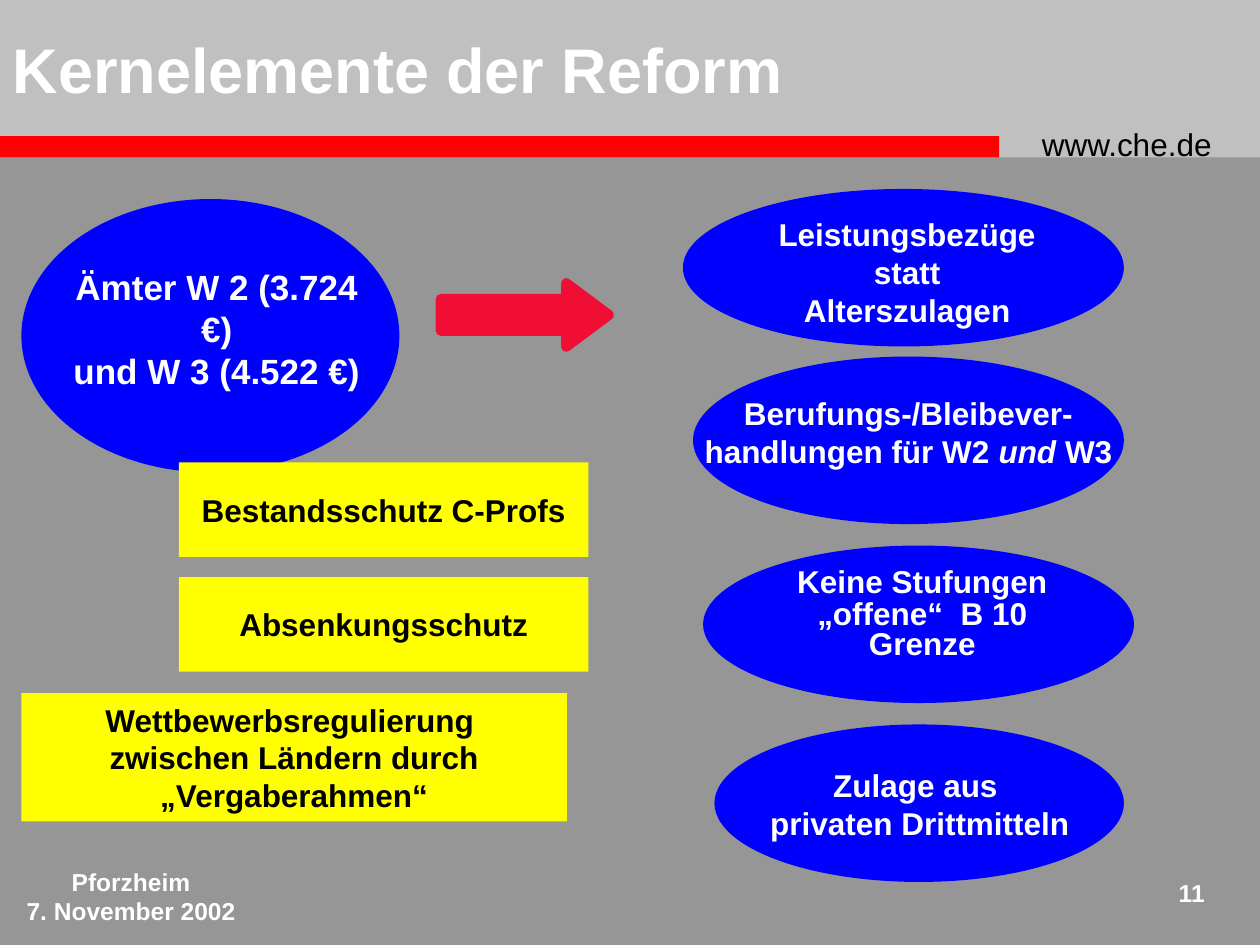
from dataclasses import dataclass

from pptx import Presentation
from pptx.dml.color import RGBColor as RGB
from pptx.enum.shapes import MSO_SHAPE as Shape
from pptx.enum.text import MSO_ANCHOR as Anchor, MSO_AUTO_SIZE as AutoSize, PP_ALIGN as Align
from pptx.util import Inches, Pt


@dataclass(frozen=True)
class Theme:
    font: str = "Arial"
    background: RGB = RGB(0x96, 0x96, 0x96)
    header: RGB = RGB(0xC0, 0xC0, 0xC0)
    stripe: RGB = RGB(0xFF, 0x00, 0x00)
    ellipse: RGB = RGB(0x00, 0x00, 0xFF)
    arrow: RGB = RGB(0xF0, 0x0E, 0x34)
    protection: RGB = RGB(0xFF, 0xFF, 0x00)
    white: RGB = RGB(0xFF, 0xFF, 0xFF)
    black: RGB = RGB(0x00, 0x00, 0x00)
    title: Pt = Pt(36)
    offices: Pt = Pt(20)
    body: Pt = Pt(18)
    footer: Pt = Pt(14)


theme = Theme()


def write(holder, text, size=theme.body, color=theme.white, bold=True, align=Align.CENTER,
          anchor=Anchor.MIDDLE, wrap=True, italic_word=None, line_spacing=None, space_before=None):
    """Fill a shape with one paragraph per line; \\v breaks a line within a paragraph."""
    frame = holder.text_frame
    frame.auto_size = AutoSize.NONE
    frame.word_wrap = wrap
    frame.vertical_anchor = anchor
    for number, line in enumerate(text.split("\n")):
        paragraph = frame.add_paragraph() if number else frame.paragraphs[0]
        paragraph.alignment = align
        paragraph.line_spacing = line_spacing
        paragraph.space_before = space_before if number else Pt(0)
        before, word, after = line.partition(italic_word) if italic_word else (line, "", "")
        if word:
            for part in (before, word, after):
                run = paragraph.add_run()
                run.text = part
                run.font.italic = part == word
        else:
            paragraph.text = line
        for run in paragraph.runs:
            run.font.name = theme.font
            run.font.size = size
            run.font.bold = bold
            run.font.color.rgb = color


def add_block(kind, box, fill):
    block = slide.shapes.add_shape(kind, *map(Inches, box))
    block.shadow.inherit = False
    block.fill.solid()
    block.fill.fore_color.rgb = fill
    block.line.fill.background()
    return block


prs = Presentation()
prs.slide_width, prs.slide_height = Inches(10), Inches(7.5)
slide = prs.slides.add_slide(prs.slide_layouts[5])
slide.background.fill.solid()
slide.background.fill.fore_color.rgb = theme.background

# Header band, stripe and web address
add_block(Shape.RECTANGLE, (0, 0, 10, 1.25), theme.header)
add_block(Shape.RECTANGLE, (0, 1.08, 7.93, 0.17), theme.stripe)
web_address = slide.shapes.add_textbox(Inches(8.17), Inches(0.94), Inches(1.75), Inches(0.4))
write(web_address, "www.che.de", color=theme.black, bold=False, align=Align.LEFT)

# Title, brought in front of the header band
title = slide.shapes.title
title.left, title.top, title.width, title.height = map(Inches, (0, 0, 8.08, 1.08))
write(title, "Kernelemente der Reform", size=theme.title, align=Align.LEFT)
slide.shapes._spTree.append(title._element)

# Footer: place and date, page number
place_date = slide.shapes.add_textbox(Inches(0), Inches(6.83), Inches(2.08), Inches(0.5))
write(place_date, "Pforzheim\n7. November 2002", size=theme.footer, anchor=Anchor.TOP)
page_number = slide.shapes.add_textbox(Inches(9.08), Inches(6.92), Inches(0.58), Inches(0.42))
write(page_number, "11", size=theme.footer, align=Align.RIGHT, anchor=Anchor.TOP)

# Ellipses with their captions: ellipse box, caption box, text, format
elements = [
    ((0.17, 1.58, 3, 2.17), (0.42, 2.22, 2.6, 0.77),
     "Ämter W 2 (3.724 €)\nund W 3 (4.522 €)", dict(size=theme.offices)),
    ((5.42, 1.5, 3.5, 1.25), (6.08, 1.66, 2.24, 1),
     "Leistungsbezüge\nstatt\nAlterszulagen", dict(wrap=False)),
    ((5.5, 2.83, 3.42, 1.33), (5.49, 3.08, 3.44, 0.7),
     "Berufungs-/Bleibever-\nhandlungen für W2 und W3", dict(wrap=False, italic_word="und")),
    ((5.58, 4.33, 3.42, 1.25), (6.12, 4.63, 2.4, 0.51),
     "Keine Stufungen\n„offene“  B 10 Grenze", dict(line_spacing=0.8, space_before=Pt(1))),
    ((5.67, 5.75, 3.25, 1.25), (6.01, 6.03, 2.58, 0.7),
     "Zulage aus \nprivaten Drittmitteln", dict(wrap=False)),
]
for ellipse_box, caption_box, text, text_format in elements:
    add_block(Shape.OVAL, ellipse_box, theme.ellipse)
    caption = slide.shapes.add_textbox(*map(Inches, caption_box))
    write(caption, text, **text_format)

# Arrow from the offices to the pay elements
arrow = add_block(Shape.RIGHT_ARROW, (3.5, 2.25, 1.33, 0.5), theme.arrow)
arrow.adjustments[0], arrow.adjustments[1] = 0.5, 0.67
arrow.line.color.rgb = theme.arrow
arrow.line.width = Pt(6)

# Yellow boxes: protection rules and competition
protections = [
    ((1.42, 3.67, 3.25, 0.75), "Bestandsschutz C-Profs"),
    ((1.42, 4.58, 3.25, 0.75), "Absenkungsschutz"),
    ((0.17, 5.5, 4.33, 1.02),
     "Wettbewerbsregulierung \vzwischen Ländern durch\n„Vergaberahmen“"),
]
for box, text in protections:
    write(add_block(Shape.RECTANGLE, box, theme.protection), text, color=theme.black)

prs.save("out.pptx")
